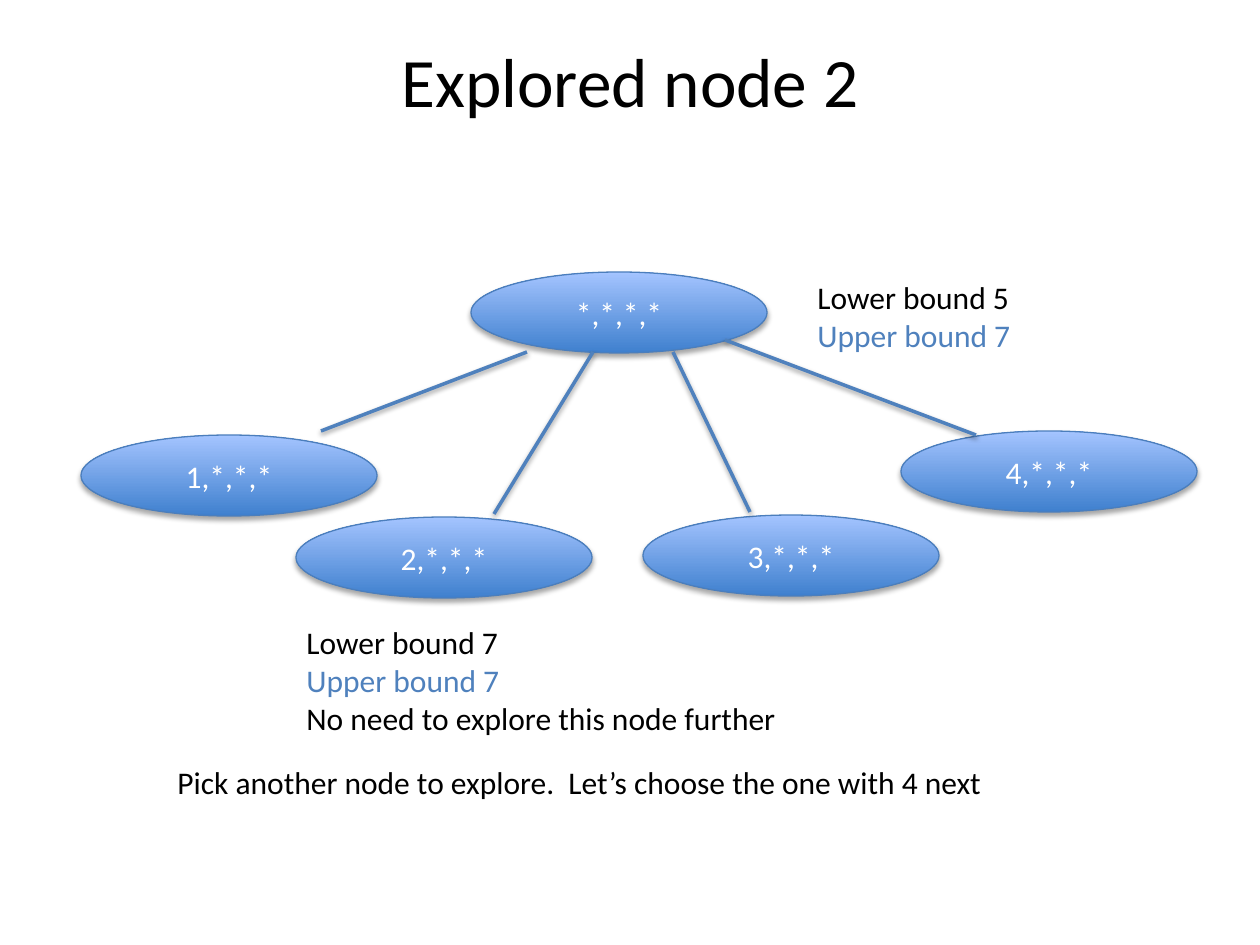
from typing import NamedTuple

import lxml.etree
import pptx
import pptx.dml.color
import pptx.enum.shapes
import pptx.enum.text
import pptx.oxml.ns
import pptx.util

PX = 914400 / 126
NODE_WIDTH, NODE_HEIGHT = 296, 81
FONT = "Calibri"
BLACK, WHITE, BLUE = "000000", "FFFFFF", "4F81BD"
NODE_LINE, NODE_BOTTOM, NODE_TOP = "4B7EBC", "3F80CE", "A4C4FF"


class Node(NamedTuple):
    label: str
    left: int
    top: int


class Branch(NamedTuple):
    x1: int
    y1: int
    x2: int
    y2: int


class Line(NamedTuple):
    text: str
    color: str = BLACK


class Note(NamedTuple):
    left: int
    top: int
    width: int
    height: int
    lines: list[Line]


NODES = [
    Node("*,*,*,*", 471, 272),
    Node("3,*,*,*", 643, 515),
    Node("4,*,*,*", 901, 431),
    Node("2,*,*,*", 296, 517),
    Node("1,*,*,*", 81, 435),
]
BRANCHES = [
    Branch(527, 352, 321, 431),
    Branch(593, 352, 494, 514),
    Branch(673, 352, 750, 512),
    Branch(725, 340, 976, 435),
]
NOTES = [
    Note(805, 272, 219, 89, [Line("Lower bound 5"), Line("Upper bound 7", BLUE)]),
    Note(165, 757, 839, 50,
         [Line("Pick another node to explore.  Let’s choose the one with 4 next")]),
    Note(294, 617, 500, 127,
         [Line("Lower bound 7"), Line("Upper bound 7", BLUE),
          Line("No need to explore this node further")]),
]


def emu(*lengths: int) -> list[int]:
    return [round(length * PX) for length in lengths]


def rgb(value: str) -> pptx.dml.color.RGBColor:
    return pptx.dml.color.RGBColor.from_string(value)


def set_font(para, size: float, color: str) -> None:
    para.font.name = FONT
    para.font.size = pptx.util.Pt(size)
    para.font.color.rgb = rgb(color)


def add_shadow(shape, distance: float, opacity: int) -> None:
    """Cast a soft black shadow straight down; opacity is in percent."""
    qn = pptx.oxml.ns.qn
    effects = lxml.etree.SubElement(shape._element.spPr, qn("a:effectLst"))
    shadow = lxml.etree.SubElement(
        effects, qn("a:outerShdw"), blurRad=str(pptx.util.Pt(3.1)),
        dist=str(pptx.util.Pt(distance)), dir="5400000", rotWithShape="0")
    color = lxml.etree.SubElement(shadow, qn("a:srgbClr"), val=BLACK)
    lxml.etree.SubElement(color, qn("a:alpha"), val=str(opacity * 1000))


def add_title(page, text: str) -> None:
    box = page.shapes.add_textbox(*emu(63, 38, 1134, 157))
    frame = box.text_frame
    frame.word_wrap = True
    frame.margin_top = 0
    para = frame.paragraphs[0]
    para.text = text
    para.alignment = pptx.enum.text.PP_ALIGN.CENTER
    set_font(para, 39.6, BLACK)


def add_node(page, node: Node) -> None:
    oval = page.shapes.add_shape(
        pptx.enum.shapes.MSO_SHAPE.OVAL,
        *emu(node.left, node.top, NODE_WIDTH, NODE_HEIGHT))
    oval.fill.gradient()
    oval.fill.gradient_angle = 90
    for stop, color in zip(oval.fill.gradient_stops, (NODE_BOTTOM, NODE_TOP)):
        stop.color.rgb = rgb(color)
    oval.line.color.rgb = rgb(NODE_LINE)
    oval.line.width = pptx.util.Pt(0.75)
    add_shadow(oval, 1.8, 35)
    frame = oval.text_frame
    frame.vertical_anchor = pptx.enum.text.MSO_ANCHOR.MIDDLE
    para = frame.paragraphs[0]
    para.text = node.label
    para.alignment = pptx.enum.text.PP_ALIGN.CENTER
    set_font(para, 18, WHITE)


def add_branch(page, branch: Branch) -> None:
    connector = page.shapes.add_connector(
        pptx.enum.shapes.MSO_CONNECTOR.STRAIGHT, *emu(*branch))
    connector.line.color.rgb = rgb(BLUE)
    connector.line.width = pptx.util.Pt(2)
    add_shadow(connector, 1.6, 38)


def add_note(page, note: Note) -> None:
    box = page.shapes.add_textbox(*emu(note.left, note.top, note.width, note.height))
    frame = box.text_frame
    frame.word_wrap = False
    frame.auto_size = pptx.enum.text.MSO_AUTO_SIZE.SHAPE_TO_FIT_TEXT
    frame.text = "\n".join(line.text for line in note.lines)
    for para, line in zip(frame.paragraphs, note.lines):
        set_font(para, 18, line.color)


def main() -> None:
    deck = pptx.Presentation()
    deck.slide_width, deck.slide_height = emu(1260, 945)
    page = deck.slides.add_slide(deck.slide_layouts[6])
    add_title(page, "Explored node 2")
    for node in NODES:
        add_node(page, node)
    for branch in BRANCHES:
        add_branch(page, branch)
    for note in NOTES:
        add_note(page, note)
    deck.save("out.pptx")


if __name__ == "__main__":
    main()
